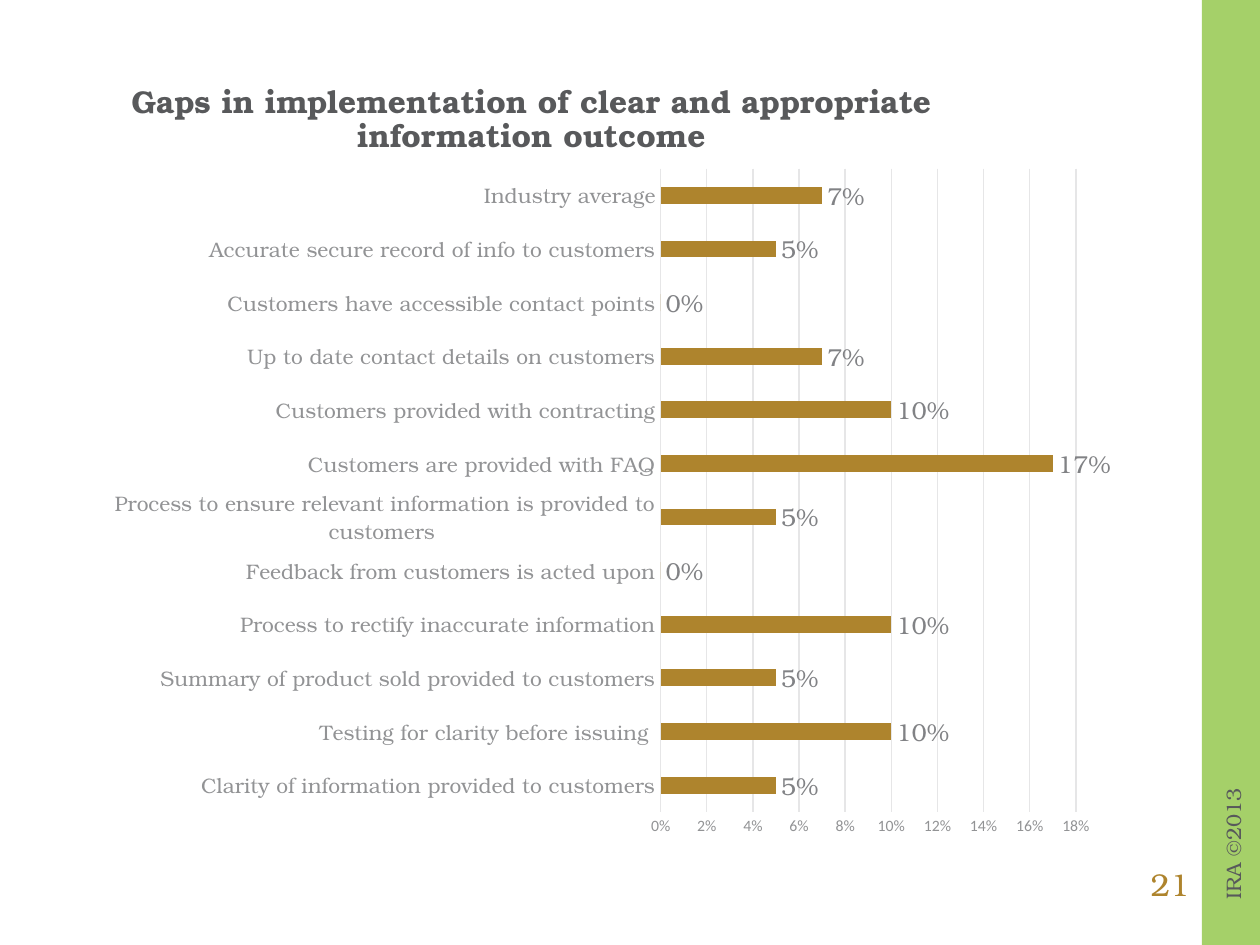
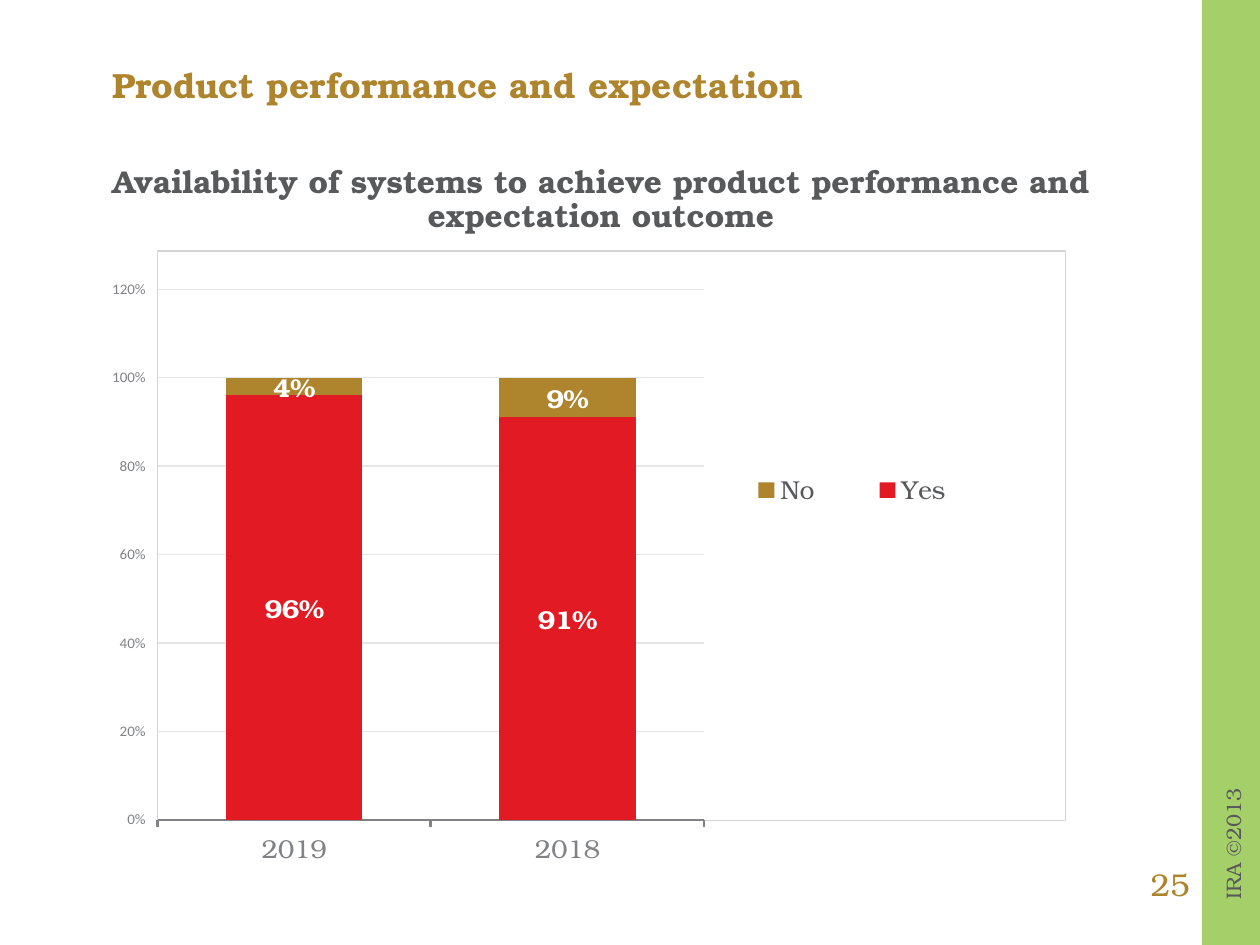
"""Build two survey slides with bar charts and a shared green side band."""
from dataclasses import dataclass
from typing import Optional

from lxml import etree
from pptx import Presentation
from pptx.chart.data import CategoryChartData
from pptx.dml.color import RGBColor
from pptx.enum.chart import XL_CHART_TYPE, XL_LABEL_POSITION, XL_LEGEND_POSITION, XL_TICK_MARK
from pptx.enum.shapes import MSO_SHAPE
from pptx.enum.text import MSO_ANCHOR, PP_ALIGN
from pptx.oxml import parse_xml
from pptx.oxml.ns import nsdecls, qn
from pptx.util import Cm, Pt

BAR, STACKED = XL_CHART_TYPE.BAR_CLUSTERED, XL_CHART_TYPE.COLUMN_STACKED
OUTSIDE, MIDDLE_LABEL = XL_LABEL_POSITION.OUTSIDE_END, XL_LABEL_POSITION.CENTER
LEGEND_RIGHT = XL_LEGEND_POSITION.RIGHT
TICK_NONE, TICK_OUT = XL_TICK_MARK.NONE, XL_TICK_MARK.OUTSIDE
RECTANGLE = MSO_SHAPE.RECTANGLE
TOP, MIDDLE = MSO_ANCHOR.TOP, MSO_ANCHOR.MIDDLE
LEFT, CENTER = PP_ALIGN.LEFT, PP_ALIGN.CENTER

SERIF, SANS = "TeX Gyre Bonum", "Calibri"
GREEN, GOLD, RED, WHITE = "A5D069", "AE842D", "E21A23", "FFFFFF"
DARK, GRAY, PALE_GRAY, GRID, BORDER = "58595B", "818285", "929395", "E6E6E7", "D5D5D6"
PERCENT = "0%"


@dataclass(frozen=True)
class Area:
    """Place and size in centimetres."""
    left: float
    top: float
    width: float
    height: float

    def lengths(self) -> tuple:
        """Return the four lengths for python-pptx."""
        return tuple(Cm(n) for n in (self.left, self.top, self.width, self.height))


@dataclass(frozen=True)
class Type:
    """Size, colour, weight and font of some text."""
    size: float
    color: str
    bold: bool = False
    name: str = SERIF


@dataclass(frozen=True)
class Bars:
    """One data series and its colour."""
    name: str
    values: tuple
    color: str


@dataclass(frozen=True)
class BarChart:
    """Everything that distinguishes one bar chart from another."""
    kind: int
    area: Area
    categories: tuple
    series: tuple
    gap: int
    maximum: float
    step: float
    tick: int
    category_type: Type
    value_type: Type
    axis_color: str
    axis_width: float
    label_type: Type
    label_position: int
    overlap: int = 0
    legend_type: Optional[Type] = None
    legend_layout: tuple = ()
    plot_layout: tuple = ()
    border: str = ""


BAND = Area(24.23, 0, 1.17, 19.05)
COPYRIGHT = Area(23.32, 16.64, 3.07, 0.76)
PAGE_NUMBER = Area(22.83, 17.32, 1.52, 1.02)
HEADING = Type(18, DARK, bold=True)

GAPS = BarChart(
    kind=BAR, area=Area(1.9, 3.12, 20.5, 14),
    categories=(
        "Clarity of information provided to customers",
        "Testing for clarity before issuing ",
        "Summary of product sold provided to customers",
        "Process to rectify inaccurate information",
        "Feedback from customers is acted upon",
        "Process to ensure relevant information is provided to customers ",
        "Customers are provided with FAQ",
        "Customers provided with contracting",
        "Up to date contact details on customers",
        "Customers have accessible contact points",
        "Accurate secure record of info to customers",
        "Industry average",
    ),
    series=(Bars("Series 1", (0.05, 0.1, 0.05, 0.1, 0, 0.05, 0.17, 0.1, 0.07, 0, 0.05, 0.07),
                 GOLD),),
    gap=219, maximum=0.18, step=0.02, tick=TICK_NONE,
    category_type=Type(12, PALE_GRAY), value_type=Type(9, PALE_GRAY, name=SANS),
    axis_color=GRID, axis_width=0.75,
    label_type=Type(14, GRAY), label_position=OUTSIDE,
)

SYSTEMS = BarChart(
    kind=STACKED, area=Area(2.26, 5.05, 19.23, 12.4),
    categories=("2019", "2018"),
    series=(Bars("Yes", (0.96, 0.91), RED), Bars("No", (0.04, 0.09), GOLD)),
    gap=100, overlap=100, maximum=1.2, step=0.2, tick=TICK_OUT,
    category_type=Type(16, GRAY), value_type=Type(9, GRAY, name=SANS),
    axis_color=GRAY, axis_width=1.5,
    label_type=Type(16, WHITE, bold=True), label_position=MIDDLE_LABEL,
    legend_type=Type(16, DARK), legend_layout=(0.6, 0.37, 0.33, 0.1),
    plot_layout=(0, 0.067, 0.602, 0.933), border=BORDER,
)


def rgb(color: str) -> RGBColor:
    """Turn a hex string into a colour."""
    return RGBColor.from_string(color)


def style_font(font, style: Type) -> None:
    """Apply a type style to any font."""
    font.size, font.bold, font.name = Pt(style.size), style.bold, style.name
    font.color.rgb = rgb(style.color)


def style_line(line, color: str, width: float) -> None:
    """Give a line its colour and width."""
    line.color.rgb = rgb(color)
    line.width = Pt(width)


def add_text(page, text: str, area: Area, style: Type, *, align=CENTER, anchor=TOP,
             inset: bool = False, spacing: float = 1.0, rotation: float = 0) -> None:
    """Add a wrapped text box with one paragraph."""
    box = page.shapes.add_textbox(*area.lengths())
    box.rotation = rotation
    frame = box.text_frame
    frame.word_wrap = True
    frame.vertical_anchor = anchor
    if not inset:
        frame.margin_left = frame.margin_right = frame.margin_top = frame.margin_bottom = 0
    para = frame.paragraphs[0]
    para.alignment, para.line_spacing = align, spacing
    span = para.add_run()
    span.text = text
    style_font(span.font, style)


def add_page(deck, number: int):
    """Add a blank page with band, copyright line and page number."""
    page = deck.slides.add_slide(deck.slide_layouts[6])
    band = page.shapes.add_shape(RECTANGLE, *BAND.lengths())
    band.shadow.inherit = False
    band.fill.solid()
    band.fill.fore_color.rgb = rgb(GREEN)
    band.line.fill.background()
    add_text(page, "IRA ©2013", COPYRIGHT, Type(12, DARK), inset=True, rotation=270)
    add_text(page, str(number), PAGE_NUMBER, Type(18, GOLD), inset=True)
    return page


def set_layout(parent, index: int, fractions: tuple, inner: bool = False) -> None:
    """Place a chart part by fractions of the chart area."""
    for old in parent.findall(qn("c:layout")):
        parent.remove(old)
    layout = parse_xml(f"<c:layout {nsdecls('c')}><c:manualLayout/></c:layout>")
    settings = [("layoutTarget", "inner")] if inner else []
    settings += [("xMode", "edge"), ("yMode", "edge"), *zip("xywh", fractions)]
    for tag, value in settings:
        etree.SubElement(layout[0], qn(f"c:{tag}")).set("val", str(value))
    parent.insert(index, layout)


def style_axes(chart, design: BarChart) -> None:
    """Format the category and value axes."""
    for axis, style in ((chart.category_axis, design.category_type),
                        (chart.value_axis, design.value_type)):
        style_font(axis.tick_labels.font, style)
        axis.major_tick_mark, axis.minor_tick_mark = design.tick, TICK_NONE
    chart.category_axis.has_major_gridlines = False
    style_line(chart.category_axis.format.line, design.axis_color, design.axis_width)
    values = chart.value_axis
    values.minimum_scale, values.maximum_scale, values.major_unit = 0, design.maximum, design.step
    values.tick_labels.number_format = PERCENT
    values.tick_labels.number_format_is_linked = False
    values.format.line.fill.background()
    values.has_major_gridlines = True
    style_line(values.major_gridlines.format.line, GRID, 0.75)


def style_series(plot, design: BarChart) -> None:
    """Colour the bars and label their values."""
    plot.gap_width, plot.overlap, plot.vary_by_categories = design.gap, design.overlap, False
    for series, bars in zip(plot.series, design.series):
        series.format.fill.solid()
        series.format.fill.fore_color.rgb = rgb(bars.color)
        series.invert_if_negative = False
        labels = series.data_labels
        labels.show_value = True
        labels.number_format, labels.number_format_is_linked = PERCENT, False
        labels.position = design.label_position
        style_font(labels.font, design.label_type)


def add_bar_chart(page, design: BarChart) -> None:
    """Draw a bar chart from its design."""
    data = CategoryChartData(number_format=PERCENT)
    data.categories = design.categories
    for bars in design.series:
        data.add_series(bars.name, bars.values)
    chart = page.shapes.add_chart(design.kind, *design.area.lengths(), data).chart
    chart.has_title = False
    style_font(chart.font, Type(10, DARK, name=SANS))
    style_axes(chart, design)
    style_series(chart.plots[0], design)
    chart.has_legend = design.legend_type is not None
    root = chart.element.find(qn("c:chart"))
    if design.legend_type:
        chart.legend.position, chart.legend.include_in_layout = LEGEND_RIGHT, False
        style_font(chart.legend.font, design.legend_type)
        set_layout(root.find(qn("c:legend")), 1, design.legend_layout)
    if design.plot_layout:
        set_layout(root.find(qn("c:plotArea")), 0, design.plot_layout, inner=True)
    outline = (f'<a:ln w="{Pt(0.75)}"><a:solidFill><a:srgbClr val="{design.border}"/>'
               "</a:solidFill></a:ln>" if design.border else "<a:ln><a:noFill/></a:ln>")
    root.addnext(parse_xml(f"<c:spPr {nsdecls('c', 'a')}><a:noFill/>{outline}</c:spPr>"))


def main() -> None:
    """Build and save the deck."""
    deck = Presentation()
    deck.slide_width, deck.slide_height = Cm(25.4), Cm(19.05)

    page = add_page(deck, 21)
    add_text(page, "Gaps in implementation of clear and appropriate information outcome",
             Area(1.9, 1.73, 17.63, 1.4), HEADING, anchor=MIDDLE, spacing=0.9)
    add_bar_chart(page, GAPS)

    page = add_page(deck, 25)
    add_text(page, "Product performance and expectation", Area(2.26, 1.37, 17.15, 0.76),
             Type(20, GOLD, bold=True), align=LEFT, anchor=MIDDLE, spacing=0.9)
    add_text(page, "Availability of systems to achieve product performance and expectation outcome",
             Area(1.83, 3.35, 20.57, 1.4), HEADING, spacing=0.9)
    add_bar_chart(page, SYSTEMS)

    deck.save("out.pptx")


if __name__ == "__main__":
    main()
